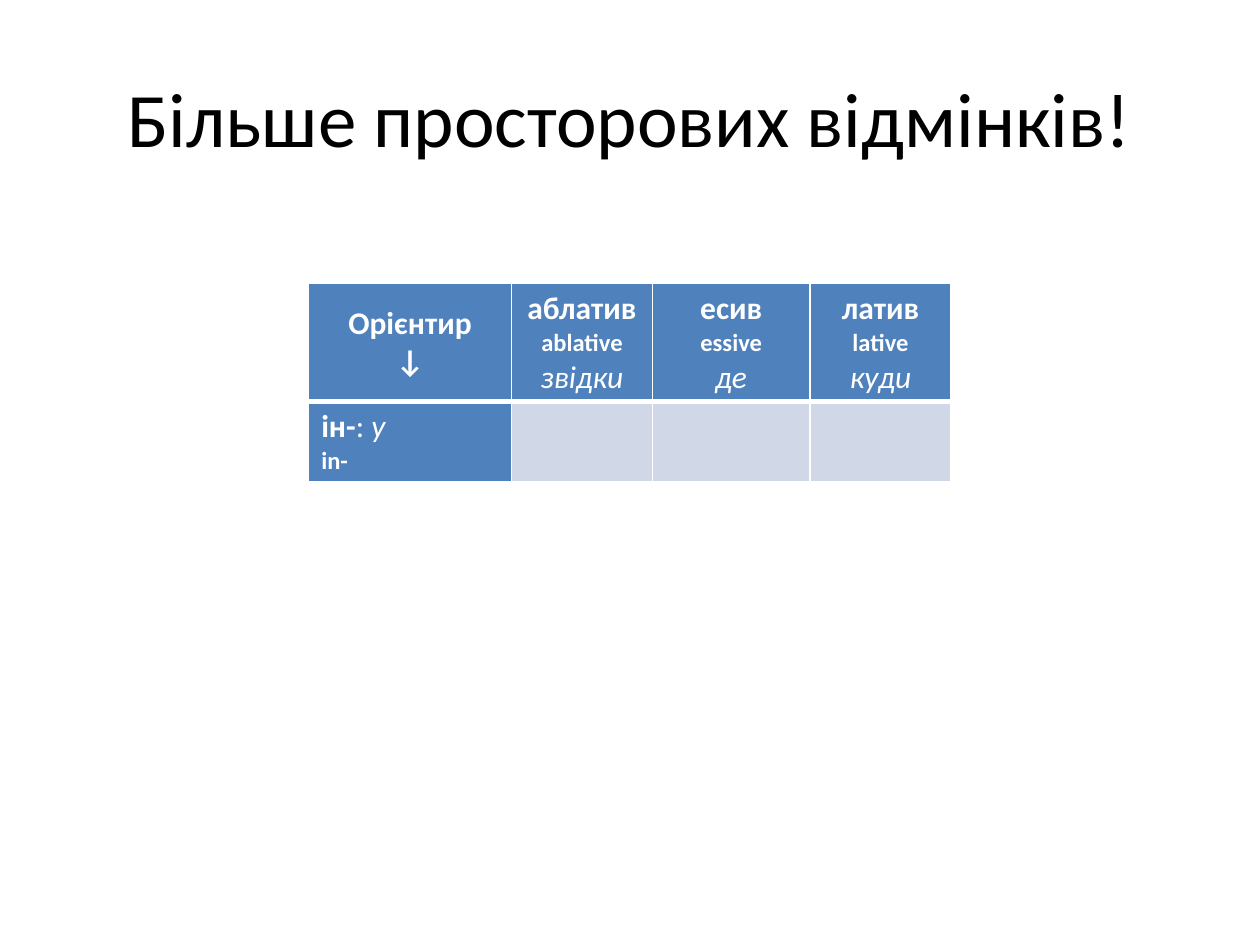
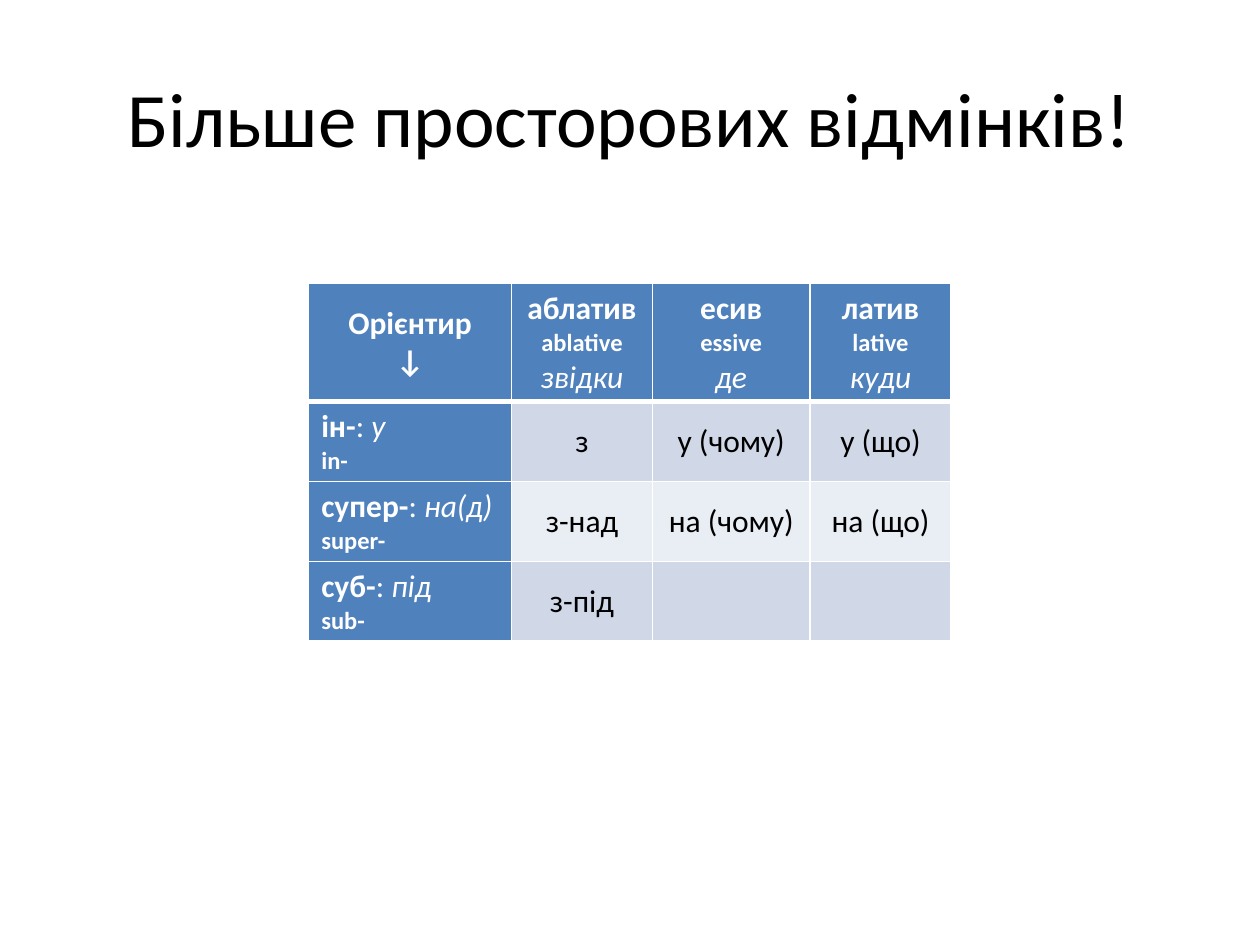
"""Builds two slides with tables of spatial grammatical cases."""
from lxml import etree
from pptx import Presentation
from pptx import util as u
from pptx.dml import color
from pptx.enum import text
from pptx.oxml import ns

COLOURS = {"ink": "000000", "white": "FFFFFF", "head": "4F81BD",
           "band": "D0D8E8", "pale": "E9EDF4"}
FORMATS = {
    "title": {"size": u.Pt(44), "bold": False, "italic": False},
    "term": {"size": u.Pt(18), "bold": True, "italic": False},
    "latin": {"size": u.Pt(14), "bold": True, "italic": False},
    "plain": {"size": u.Pt(18), "bold": False, "italic": False},
    "gloss": {"size": u.Pt(18), "bold": False, "italic": True},
}
TITLE = "Більше просторових відмінків!"
COLUMNS = (115.9, 80.6, 90, 80.6)
HEAD_HEIGHT, ROW_HEIGHT = 67.5, 45.5
CASES = [("аблатив", "ablative", "звідки"), ("есив", "essive", "де"),
         ("латив", "lative", "куди")]
LANDMARKS = [
    ("ін-", "у", "in-", ("з", "у (чому)", "у (що)")),
    ("супер-", "на(д)", "super-", ("з-над", "на (чому)", "на (що)")),
    ("суб-", "під", "sub-", ("з-під", "", "")),
]


class Deck:
    """Holds the shared style and the current slide."""

    def __init__(self):
        self.prs = Presentation()
        self.prs.slide_width, self.prs.slide_height = u.Pt(720), u.Pt(540)
        self.slide = None

    def rgb(self, name):
        return color.RGBColor.from_string(COLOURS[name])

    def fill_text(self, frame, paragraphs, ink, align):
        for index, runs in enumerate(paragraphs):
            line = frame.paragraphs[0] if index == 0 else frame.add_paragraph()
            line.alignment = align
            for words, style in runs:
                run = line.add_run()
                run.text = words
                for key, value in {**FORMATS[style], "name": "Calibri"}.items():
                    setattr(run.font, key, value)
                run.font.color.rgb = self.rgb(ink)

    def new_slide(self, title):
        self.slide = self.prs.slides.add_slide(self.prs.slide_layouts[6])
        heading = self.slide.shapes.add_textbox(u.Pt(36), u.Pt(21.6), u.Pt(648), u.Pt(90))
        heading.text_frame.word_wrap = True
        heading.text_frame.vertical_anchor = text.MSO_ANCHOR.MIDDLE
        self.fill_text(heading.text_frame, [[(title, "title")]], "ink", text.PP_ALIGN.CENTER)

    def borders(self, cell, top, bottom):
        props = cell._tc.get_or_add_tcPr()
        for side, width in {"L": 1, "R": 1, "T": top, "B": bottom}.items():
            edge = etree.SubElement(props, ns.qn(f"a:ln{side}"), w=str(u.Pt(width)))
            paint = etree.SubElement(edge, ns.qn("a:solidFill"))
            etree.SubElement(paint, ns.qn("a:srgbClr"), val=COLOURS["white"])

    def cell(self, grid, row, column, paragraphs):
        cell = grid.cell(row, column)
        header = row == 0 or column == 0
        self.borders(cell, 3 if row == 1 else 1, 3 if row == 0 else 1)
        cell.fill.solid()
        cell.fill.fore_color.rgb = self.rgb("head" if header else "band" if row % 2 else "pale")
        cell.vertical_anchor = text.MSO_ANCHOR.MIDDLE
        align = text.PP_ALIGN.LEFT if row and not column else text.PP_ALIGN.CENTER
        self.fill_text(cell.text_frame, paragraphs, "white" if header else "ink", align)

    def case_table(self, landmarks, filled):
        rows = len(landmarks) + 1
        height = HEAD_HEIGHT + ROW_HEIGHT * len(landmarks)
        grid = self.slide.shapes.add_table(rows, len(COLUMNS), u.Pt(176.4), u.Pt(162),
                                           u.Pt(sum(COLUMNS)), u.Pt(height)).table
        grid.first_row = grid.horz_banding = False
        for column, width in zip(grid.columns, COLUMNS):
            column.width = u.Pt(width)
        for index, row in enumerate(grid.rows):
            row.height = u.Pt(ROW_HEIGHT if index else HEAD_HEIGHT)
        self.cell(grid, 0, 0, [[("Орієнтир", "term")], [("↓", "term")]])
        for column, (name, latin, question) in enumerate(CASES, 1):
            self.cell(grid, 0, column,
                      [[(name, "term")], [(latin, "latin")], [(question, "gloss")]])
        for row, (prefix, meaning, latin, answers) in enumerate(landmarks, 1):
            self.cell(grid, row, 0, [[(prefix, "term"), (": ", "plain"), (meaning, "gloss")],
                                     [(latin, "latin")]])
            for column, answer in enumerate(answers, 1):
                shown = [[(answer, "plain")]] if filled and answer else []
                self.cell(grid, row, column, shown)


def main():
    deck = Deck()
    for landmarks, filled in ((LANDMARKS[:1], False), (LANDMARKS, True)):
        deck.new_slide(TITLE)
        deck.case_table(landmarks, filled)
    deck.prs.save("out.pptx")


if __name__ == "__main__":
    main()
